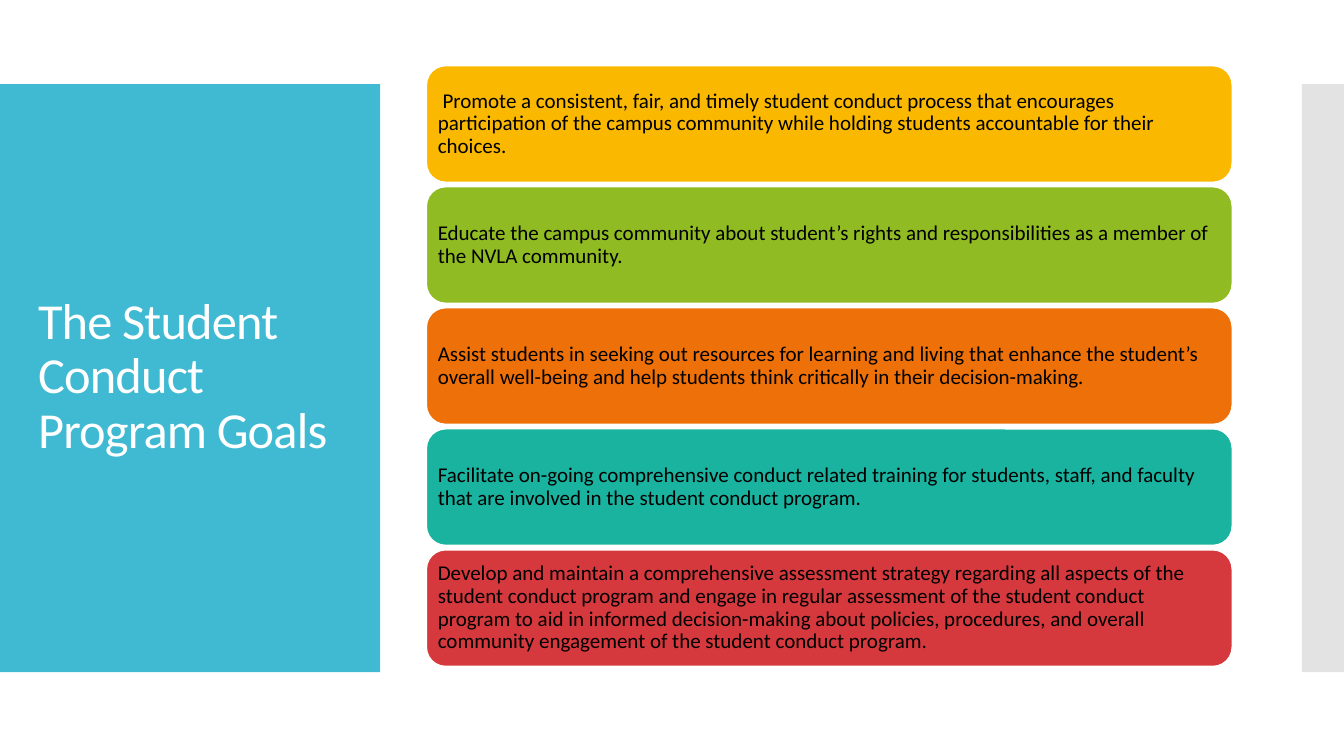
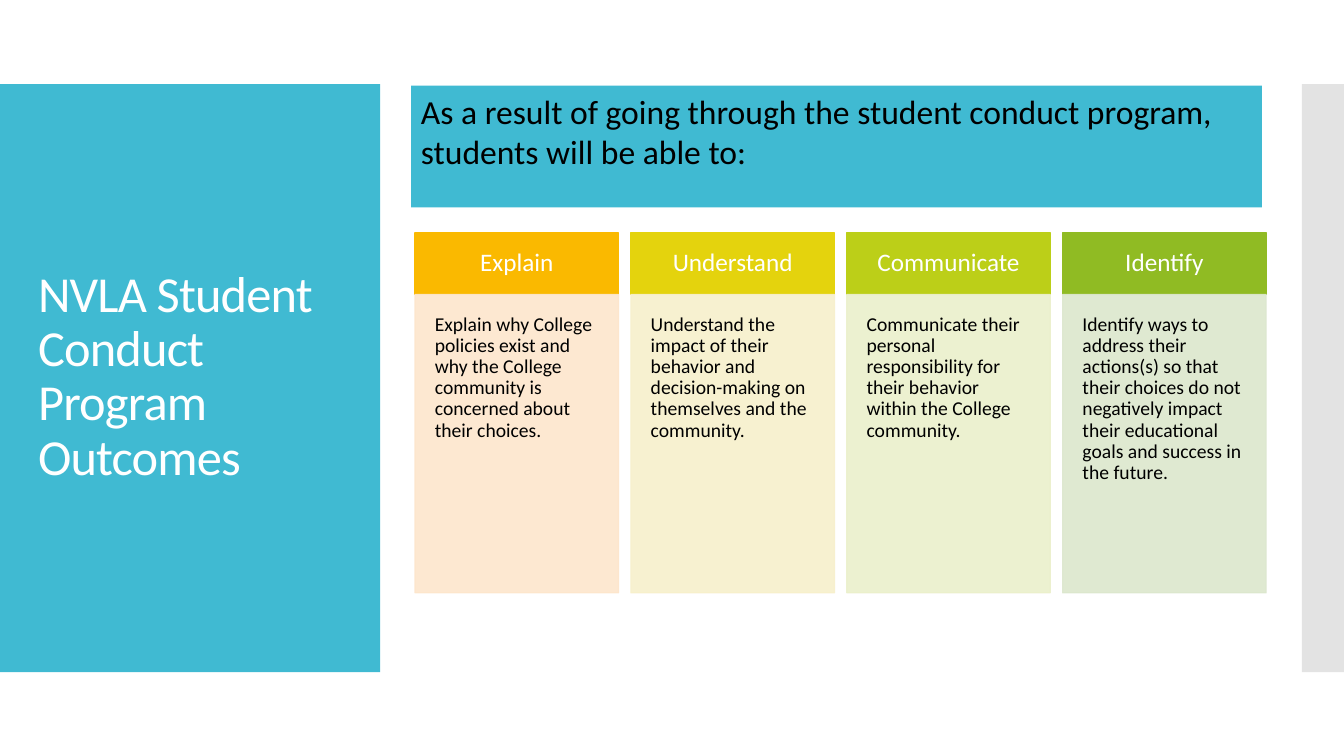
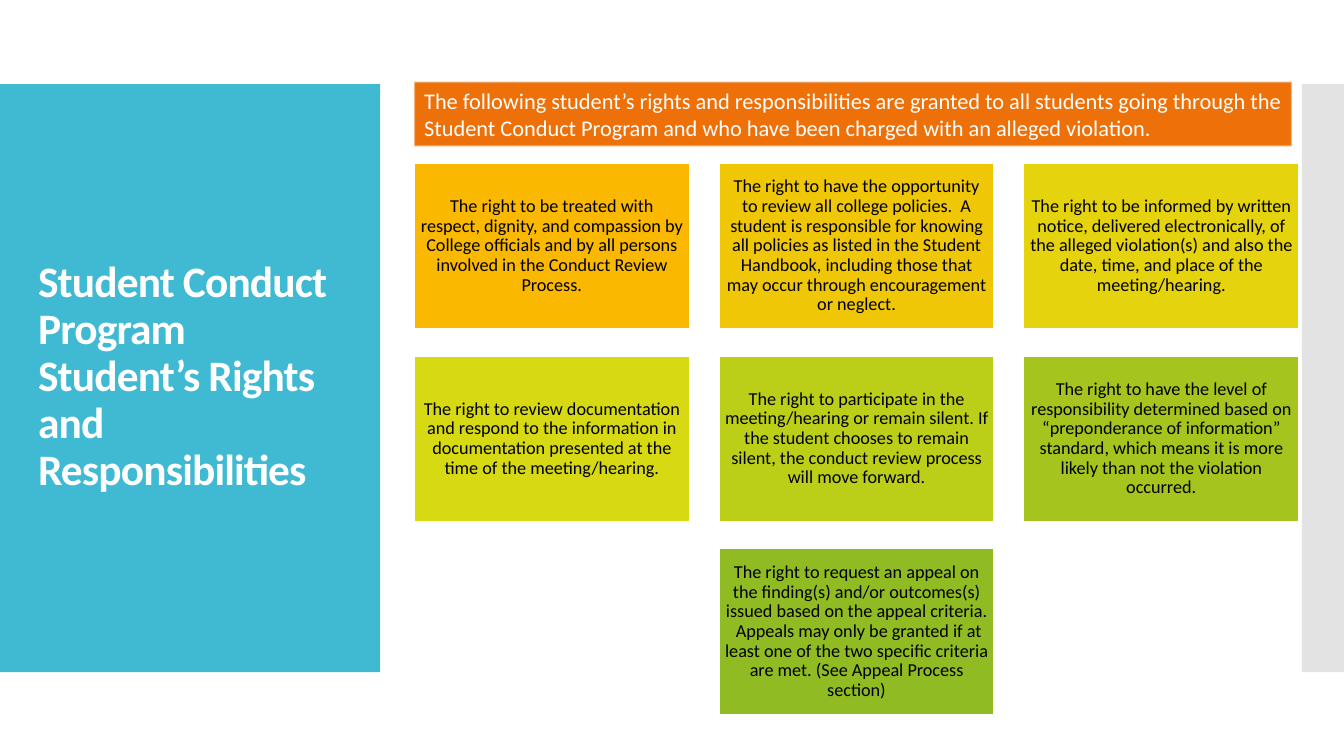
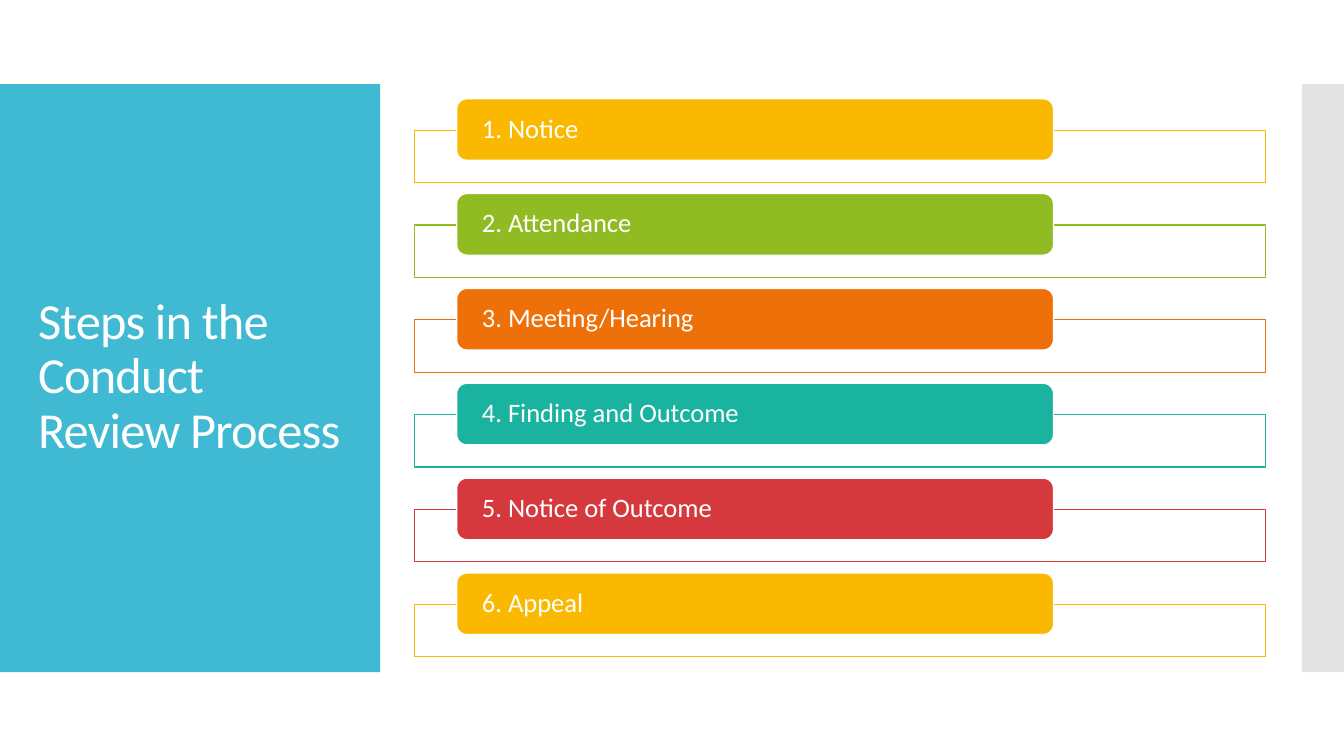
from dataclasses import dataclass
from typing import Optional

from lxml.etree import SubElement
from pptx import Presentation
from pptx.dml.color import RGBColor
from pptx.enum.shapes import MSO_SHAPE
from pptx.enum.text import MSO_ANCHOR, PP_ALIGN
from pptx.oxml.ns import qn
from pptx.util import Cm, Pt

FONT = "Calibri"
COLORS = {
    "white": "FFFFFF",
    "black": "000000",
    "panel": "40BAD2",
    "side": "C8C8C8",
    "edge": "F9F9F9",
    "amber": "FAB900",
    "gold": "EFC706",
    "yellow": "E4D30D",
    "lemon": "D7D913",
    "lime": "BCCF18",
    "leaf": "A5C51E",
    "green": "90BB23",
    "orange": "EE7008",
    "teal": "1AB39F",
    "red": "D5393D",
    "pale amber": "FDE6CC",
    "pale yellow": "F7F0CB",
    "pale lime": "EBF0CB",
    "pale green": "DCE7CD",
}
ACCENTS = ("amber", "green", "orange", "teal", "red")


@dataclass(frozen=True)
class Box:
    """A place on the slide, in centimetres."""
    left: float
    top: float
    width: float
    height: float

    def moved(self, right: float = 0, down: float = 0) -> "Box":
        return Box(self.left + right, self.top + down, self.width, self.height)


@dataclass(frozen=True)
class Look:
    fill: str
    line: Optional[str] = None
    weight: float = 0.85
    fill_alpha: int = 100
    line_alpha: int = 100
    rounded: bool = False


@dataclass(frozen=True)
class TextStyle:
    size: float
    color: str = "black"
    align: PP_ALIGN = PP_ALIGN.LEFT
    anchor: MSO_ANCHOR = MSO_ANCHOR.MIDDLE
    inset_x: float = 0.25
    inset_y: float = 0.13
    spacing: float = 0.9
    bold: bool = False


@dataclass(frozen=True)
class Outcome:
    verb: str
    detail: str
    color: str
    tint: str


@dataclass(frozen=True)
class Right:
    text: str
    color: str
    column: int
    row: int


PANEL = Box(0, 2.12, 9.58, 14.82)
SIDE_BAR = Box(32.81, 2.12, 1.06, 14.82)
TITLE = Box(0.71, 3.12, 8.18, 12.78)

GOALS = (
    " Promote a consistent, fair, and timely student conduct process that encourages "
    "participation of the campus community while holding students accountable for their choices.",
    "Educate the campus community about student’s rights and responsibilities as a member of "
    "the NVLA community.",
    "Assist students in seeking out resources for learning and living that enhance the student’s "
    "overall well-being and help students think critically in their decision-making.",
    "Facilitate on-going comprehensive conduct related training for students, staff, and faculty "
    "that are involved in the student conduct program.",
    "Develop and maintain a comprehensive assessment strategy regarding all aspects of the "
    "student conduct program and engage in regular assessment of the student conduct program to "
    "aid in informed decision-making about policies, procedures, and overall community "
    "engagement of the student conduct program.",
)

OUTCOMES = (
    Outcome("Explain", "Explain why College policies exist and why the College community is "
            "concerned about their choices.", "amber", "pale amber"),
    Outcome("Understand", "Understand the impact of their behavior and decision-making on "
            "themselves and the community.", "yellow", "pale yellow"),
    Outcome("Communicate", "Communicate their personal responsibility for their behavior within "
            "the College community.", "lime", "pale lime"),
    Outcome("Identify", "Identify ways to address their actions(s) so that their choices do not "
            "negatively impact their educational goals and success in the future.",
            "green", "pale green"),
)

RIGHTS = (
    Right("The right to be treated with respect, dignity, and compassion by College officials "
          "and by all persons involved in the Conduct Review Process.", "amber", 0, 0),
    Right("The right to have the opportunity to review all college policies.  A student is "
          "responsible for knowing all policies as listed in the Student Handbook, including "
          "those that may occur through encouragement or neglect.", "gold", 1, 0),
    Right("The right to be informed by written notice, delivered electronically, of the alleged "
          "violation(s) and also the date, time, and place of the meeting/hearing.",
          "yellow", 2, 0),
    Right("The right to review documentation and respond to the information in documentation "
          "presented at the time of the meeting/hearing.", "lemon", 0, 1),
    Right("The right to participate in the meeting/hearing or remain silent. If the student "
          "chooses to remain silent, the conduct review process will move forward.",
          "lime", 1, 1),
    Right("The right to have the level of responsibility determined based on “preponderance of "
          "information” standard, which means it is more likely than not the violation "
          "occurred.", "leaf", 2, 1),
    Right("The right to request an appeal on the finding(s) and/or outcomes(s) issued based on "
          "the appeal criteria.  Appeals may only be granted if at least one of the two "
          "specific criteria are met. (See Appeal Process section)", "green", 1, 2),
)

STEPS = ("Notice", "Attendance", "Meeting/Hearing", "Finding and Outcome",
         "Notice of Outcome", "Appeal")


def rgb(name: str) -> RGBColor:
    return RGBColor.from_string(COLORS[name])


def set_alpha(shape, parent: str, percent: int) -> None:
    """Make the solid colour under the given element partly transparent."""
    if percent < 100:
        for color in shape._element.xpath(f"{parent}/a:solidFill/a:srgbClr"):
            SubElement(color, qn("a:alpha")).set("val", str(percent * 1000))


def write(shape, text: str, style: TextStyle):
    frame = shape.text_frame
    frame.word_wrap = True
    frame.vertical_anchor = style.anchor
    frame.margin_left = frame.margin_right = Cm(style.inset_x)
    frame.margin_top = frame.margin_bottom = Cm(style.inset_y)
    paragraph = frame.paragraphs[0]
    paragraph.text = text
    paragraph.alignment = style.align
    paragraph.line_spacing = style.spacing
    font = paragraph.font
    font.name, font.size, font.bold = FONT, Pt(style.size), style.bold
    font.color.rgb = rgb(style.color)
    return paragraph


def add_block(slide, box: Box, look: Look, text: str = "",
              style: Optional[TextStyle] = None) -> None:
    kind = MSO_SHAPE.ROUNDED_RECTANGLE if look.rounded else MSO_SHAPE.RECTANGLE
    block = slide.shapes.add_shape(kind, Cm(box.left), Cm(box.top), Cm(box.width), Cm(box.height))
    block.shadow.inherit = False
    block.fill.solid()
    block.fill.fore_color.rgb = rgb(look.fill)
    set_alpha(block, "p:spPr", look.fill_alpha)
    if look.line:
        block.line.color.rgb = rgb(look.line)
        block.line.width = Pt(look.weight)
        set_alpha(block, "p:spPr/a:ln", look.line_alpha)
    else:
        block.line.fill.background()
    if style:
        write(block, text, style)


def add_titled_slide(deck, title: str, size: float = 36, bold: bool = False):
    """Add a slide with the coloured title panel and the grey side bar."""
    slide = deck.slides.add_slide(deck.slide_layouts[6])
    add_block(slide, PANEL, Look("panel"))
    add_block(slide, SIDE_BAR, Look("side", fill_alpha=50))
    heading = slide.shapes.add_textbox(Cm(TITLE.left), Cm(TITLE.top),
                                       Cm(TITLE.width), Cm(TITLE.height))
    paragraph = write(heading, title, TextStyle(size, "white", bold=bold))
    paragraph.runs[0]._r.get_or_add_rPr().set("spc", "-60")
    return slide


def add_goals(deck) -> None:
    slide = add_titled_slide(deck, "The Student Conduct Program Goals")
    first = Box(10.74, 1.65, 20.32, 2.95)
    style = TextStyle(15, inset_x=0.15, inset_y=0.15)
    for index, (goal, color) in enumerate(zip(GOALS, ACCENTS)):
        add_block(slide, first.moved(down=index * 3.05),
                  Look(color, "white", 1.35, rounded=True), goal, style)


def add_outcomes(deck) -> None:
    slide = add_titled_slide(deck, "NVLA Student Conduct Program Outcomes")
    header, body = Box(10.46, 5.87, 5.13, 1.55), Box(10.46, 7.42, 5.13, 7.52)
    header_style = TextStyle(18, "white", PP_ALIGN.CENTER, inset_x=0.4, inset_y=0.4)
    body_style = TextStyle(14, anchor=MSO_ANCHOR.TOP, inset_x=0.5, inset_y=0.5)
    for index, outcome in enumerate(OUTCOMES):
        shift = index * 5.44
        add_block(slide, header.moved(shift), Look(outcome.color, outcome.color),
                  outcome.verb, header_style)
        add_block(slide, body.moved(shift),
                  Look(outcome.tint, outcome.tint, fill_alpha=90, line_alpha=90),
                  outcome.detail, body_style)
    add_block(slide, Box(10.36, 2.16, 21.44, 3.07), Look("panel"),
              "As a result of going through the student conduct program, "
              "students will be able to:",
              TextStyle(24, anchor=MSO_ANCHOR.TOP, spacing=1.0))


def add_rights(deck) -> None:
    slide = add_titled_slide(
        deck, "Student Conduct Program Student’s Rights and Responsibilities", 31, True)
    first = Box(10.44, 4.11, 6.93, 4.17)
    style = TextStyle(13, align=PP_ALIGN.CENTER, inset_x=0.13)
    for right in RIGHTS:
        add_block(slide, first.moved(right.column * 7.68, right.row * 4.86),
                  Look(right.color, "white"), right.text, style)
    add_block(slide, Box(10.44, 2.06, 22.12, 1.63),
              Look("orange", "edge", 1.35, line_alpha=50),
              "The following student’s rights and responsibilities are granted to all students "
              "going through the Student Conduct Program and who have been charged with an "
              "alleged violation.",
              TextStyle(16, "white", anchor=MSO_ANCHOR.TOP, spacing=1.0))


def add_steps(deck) -> None:
    slide = add_titled_slide(deck, "Steps in the Conduct Review Process")
    frame, label = Box(10.44, 3.28, 21.46, 1.32), Box(11.51, 2.49, 15.04, 1.55)
    style = TextStyle(19, "white", inset_x=0.56, inset_y=0)
    for index, step in enumerate(STEPS):
        color = ACCENTS[index % len(ACCENTS)]
        shift = index * 2.39
        add_block(slide, frame.moved(down=shift), Look("white", color, fill_alpha=90))
        add_block(slide, label.moved(down=shift), Look(color, "white", rounded=True),
                  f"{index + 1}. {step}", style)


def main() -> None:
    deck = Presentation()
    deck.slide_width, deck.slide_height = Cm(33.87), Cm(19.05)
    for add_content in (add_goals, add_outcomes, add_rights, add_steps):
        add_content(deck)
    deck.save("out.pptx")


if __name__ == "__main__":
    main()
